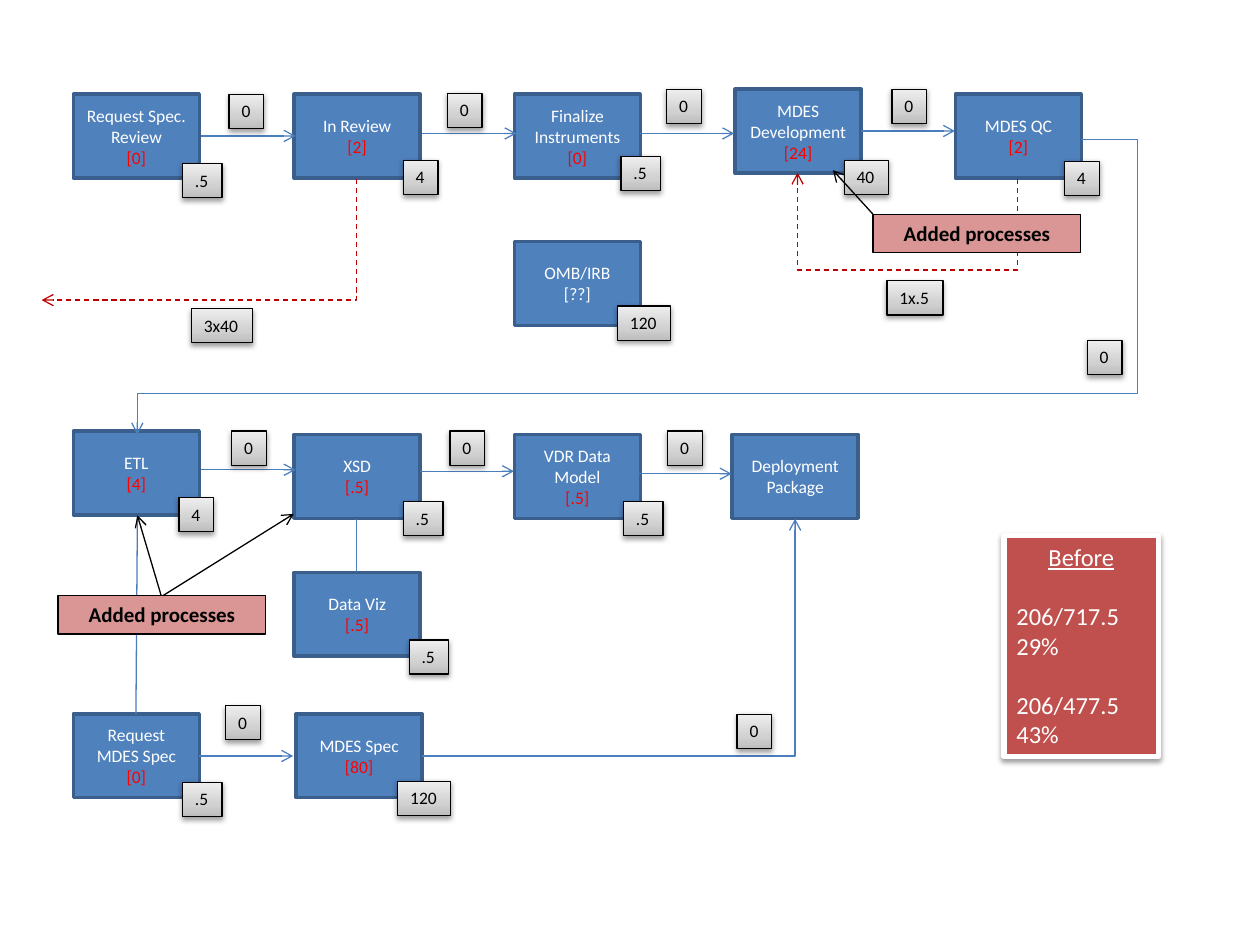
from copy import deepcopy

from lxml import etree
from pptx import Presentation
from pptx.dml.color import RGBColor
from pptx.enum.dml import MSO_LINE
from pptx.enum.shapes import MSO_CONNECTOR, MSO_SHAPE
from pptx.enum.text import MSO_ANCHOR, MSO_AUTO_SIZE, PP_ALIGN
from pptx.oxml.ns import qn
from pptx.util import Cm, Pt

RECTANGLE = MSO_SHAPE.RECTANGLE
STRAIGHT, ELBOW = MSO_CONNECTOR.STRAIGHT, MSO_CONNECTOR.ELBOW
DASH = MSO_LINE.DASH
TOP, MIDDLE = MSO_ANCHOR.TOP, MSO_ANCHOR.MIDDLE
LEFT, CENTER = PP_ALIGN.LEFT, PP_ALIGN.CENTER
FIT_TEXT = MSO_AUTO_SIZE.SHAPE_TO_FIT_TEXT

FONT = "Calibri"
WHITE = RGBColor(0xFF, 0xFF, 0xFF)
BLACK = RGBColor(0x00, 0x00, 0x00)
RED = RGBColor(0xFF, 0x00, 0x00)
DARK_RED = RGBColor(0xC0, 0x00, 0x00)
BLUE = RGBColor(0x4F, 0x81, 0xBD)
BORDER_BLUE = RGBColor(0x3A, 0x5F, 0x8C)
LINE_BLUE = RGBColor(0x4B, 0x7E, 0xBC)
PINK = RGBColor(0xD9, 0x96, 0x94)
BRICK = RGBColor(0xC0, 0x50, 0x4D)
BADGE_STOPS = [
    (0, RGBColor(0xBD, 0xBD, 0xBD)),
    (0.35, RGBColor(0xD1, 0xD1, 0xD1)),
    (1, RGBColor(0xEE, 0xEE, 0xEE)),
]

COLUMNS = [round(1.48 + 4.445 * index, 2) for index in range(5)]
ROW_1, ROW_2, ROW_3 = 1.9, 8.76, 14.39
BOX_WIDTH, BOX_HEIGHT = 2.54, 1.69
BADGE_HEIGHT = 0.69
ARROW_LENGTH = 1.9

# left, top, name lines, hours in brackets, colour of the hours
PROCESSES = [
    (COLUMNS[0], ROW_1, ["Request Spec. Review"], "[0]", RED),
    (COLUMNS[1], ROW_1, ["In Review"], "[2]", RED),
    (COLUMNS[2], ROW_1, ["Finalize Instruments"], "[0]", RED),
    (COLUMNS[3], 1.8, ["MDES Development"], "[24]", RED),
    (COLUMNS[4], ROW_1, ["MDES QC"], "[2]", RED),
    (COLUMNS[2], 4.87, ["OMB/IRB"], "[??]", WHITE),
    (COLUMNS[0], 8.69, ["ETL"], "[4]", RED),
    (COLUMNS[1], ROW_2, ["XSD"], "[.5]", RED),
    (COLUMNS[2], ROW_2, ["VDR Data Model"], "[.5]", RED),
    (14.76, ROW_2, ["Deployment Package"], None, WHITE),
    (COLUMNS[1], 11.54, ["Data Viz"], "[.5]", RED),
    (COLUMNS[0], ROW_3, ["Request", "MDES Spec"], "[0]", RED),
    (5.97, ROW_3, ["MDES Spec"], "[80]", RED),
]

# text: width, positions
BADGES = {
    "0": (0.7, [(4.62, 1.9), (9.02, 1.88), (13.44, 1.8), (17.98, 1.8),
                (21.92, 6.86), (4.67, 8.69), (9.07, 8.69), (13.46, 8.69),
                (4.55, 14.22), (14.86, 14.4)]),
    "4": (0.7, [(8.13, 3.23), (21.46, 3.25), (3.61, 10.03)]),
    ".5": (0.8, [(3.68, 3.3), (12.52, 3.15), (8.13, 10.11), (12.57, 10.11),
                 (8.25, 12.9), (3.68, 15.77)]),
    "40": (0.89, [(17.02, 3.23)]),
    "120": (1.07, [(12.45, 6.17), (8.02, 15.75)]),
    "3x40": (1.23, [(3.86, 6.22)]),
    "1x.5": (1.13, [(17.88, 5.66)]),
}

STEP_ARROWS = [
    (4.06, 2.74), (8.51, 2.69), (12.9, 2.69), (17.35, 2.64),
    (4.06, 9.47), (8.46, 9.5), (12.85, 9.55), (4.01, 15.24),
]
PLAIN_LINES = [((2.77, 10.39), (2.74, 14.4)), ((7.19, 10.46), (7.19, 11.53))]
CALLOUTS = [(17.6, 4.32), (1.17, 12.01)]
CALLOUT_ARROWS = [
    ((17.6, 4.32), (16.79, 3.43)),
    ((3.25, 12.01), (2.77, 10.39)),
    ((3.28, 12.01), (5.92, 10.36)),
]


def add_rectangle(slide, left, top, width, height, line_color, line_width, fill=None):
    shape = slide.shapes.add_shape(
        RECTANGLE, Cm(left), Cm(top), Cm(width), Cm(height))
    shape.shadow.inherit = False
    if fill is not None:
        shape.fill.solid()
        shape.fill.fore_color.rgb = fill
    shape.line.color.rgb = line_color
    shape.line.width = Pt(line_width)
    return shape


def write_lines(shape, lines, size, color, alignment, anchor=TOP):
    frame = shape.text_frame
    frame.word_wrap = True
    frame.vertical_anchor = anchor
    frame.text = "\n".join(lines)
    for paragraph in frame.paragraphs:
        paragraph.alignment = alignment
        paragraph.font.name = FONT
        paragraph.font.size = Pt(size)
        paragraph.font.color.rgb = color
    return frame


def add_soft_shadow(shape):
    effects = shape._element.spPr.find(qn("a:effectLst"))
    shadow = etree.SubElement(effects, qn("a:outerShdw"), blurRad=str(Pt(3.1)),
                              dist=str(Pt(1.6)), dir="5400000", rotWithShape="0")
    color = etree.SubElement(shadow, qn("a:srgbClr"), val=str(BLACK))
    etree.SubElement(color, qn("a:alpha"), val="38000")


def add_process(slide, left, top, names, hours, hours_color):
    shape = add_rectangle(slide, left, top, BOX_WIDTH, BOX_HEIGHT, BORDER_BLUE, 2, BLUE)
    lines = names + [hours] if hours else names
    frame = write_lines(shape, lines, 10, WHITE, CENTER, MIDDLE)
    if hours:
        frame.paragraphs[-1].font.color.rgb = hours_color


def add_badge(slide, text, left, top, width):
    shape = add_rectangle(slide, left, top, width, BADGE_HEIGHT, BLACK, 0.75)
    shape.fill.gradient()
    shape.fill.gradient_angle = 90
    stop_list = shape._element.spPr.find(".//" + qn("a:gsLst"))
    stop_list.append(deepcopy(stop_list[0]))
    for stop, (position, color) in zip(shape.fill.gradient_stops, BADGE_STOPS):
        stop.position = position
        stop.color.rgb = color
    add_soft_shadow(shape)
    frame = write_lines(shape, [text], 10, BLACK, LEFT)
    frame.word_wrap = False
    frame.auto_size = FIT_TEXT


def add_callout(slide, left, top):
    shape = add_rectangle(slide, left, top, 4.19, 0.77, BLACK, 0.75, PINK)
    frame = write_lines(shape, ["Added processes"], 12, BLACK, CENTER)
    frame.paragraphs[0].font.bold = True


def add_summary(slide):
    shape = add_rectangle(slide, 20.24, 10.8, 3.12, 4.45, WHITE, 3, BRICK)
    add_soft_shadow(shape)
    lines = ["Before", "206/717.5", "29%", "206/477.5", "43%"]
    paragraphs = write_lines(shape, lines, 14, WHITE, LEFT).paragraphs
    paragraphs[0].alignment = CENTER
    paragraphs[0].font.underline = True
    for paragraph in (paragraphs[1], paragraphs[3]):
        paragraph.space_before = Pt(17)


def add_line(slide, begin, end, color=LINE_BLUE, arrow=True, kind=STRAIGHT):
    connector = slide.shapes.add_connector(kind, *map(Cm, begin + end))
    connector.line.color.rgb = color
    connector.line.width = Pt(0.75)
    properties = connector._element.spPr
    if arrow:
        etree.SubElement(properties.find(qn("a:ln")), qn("a:tailEnd"), type="arrow")
    etree.SubElement(properties, qn("a:effectLst"))
    return connector


def add_elbow(slide, begin, end, preset, adjustments=(), color=LINE_BLUE, upright=False):
    """Draw a bent arrow; an upright one leaves its start vertically."""
    if upright:
        middle_x, middle_y = (begin[0] + end[0]) / 2, (begin[1] + end[1]) / 2
        begin, end = [(middle_x + y - middle_y, middle_y - x + middle_x)
                      for x, y in (begin, end)]
    connector = add_line(slide, begin, end, color, kind=ELBOW)
    properties = connector._element.spPr
    if upright:
        properties.find(qn("a:xfrm")).set("rot", "5400000")
    geometry = properties.find(qn("a:prstGeom"))
    geometry.set("prst", preset)
    for number, value in enumerate(adjustments, 1):
        etree.SubElement(geometry.find(qn("a:avLst")), qn("a:gd"),
                         name=f"adj{number}", fmla=f"val {round(value * 100000)}")
    return connector


def add_flow_lines(slide):
    for left, top in STEP_ARROWS:
        add_line(slide, (left, top), (left + ARROW_LENGTH, top))
    for begin, end in PLAIN_LINES:
        add_line(slide, begin, end, arrow=False)
    add_elbow(slide, (21.79, 2.82), (2.77, 8.76), "bentConnector4", (-0.06, 0.86))
    add_elbow(slide, (8.51, 15.24), (16.03, 10.46), "bentConnector2")
    rework_lines = [
        ((20.52, 3.61), (16.08, 3.48), "bentConnector3", (-14.1,)),
        ((7.19, 3.61), (0.84, 6.05), "bentConnector2", ()),
    ]
    for rework in rework_lines:
        connector = add_elbow(slide, *rework, color=DARK_RED, upright=True)
        connector.line.dash_style = DASH


def main():
    presentation = Presentation()
    presentation.slide_width, presentation.slide_height = Cm(25.4), Cm(19.05)
    slide = presentation.slides.add_slide(presentation.slide_layouts[6])
    for process in PROCESSES:
        add_process(slide, *process)
    add_flow_lines(slide)
    for text, (width, positions) in BADGES.items():
        for left, top in positions:
            add_badge(slide, text, left, top, width)
    add_summary(slide)
    for left, top in CALLOUTS:
        add_callout(slide, left, top)
    for begin, end in CALLOUT_ARROWS:
        add_line(slide, begin, end, BLACK)
    presentation.save("out.pptx")


if __name__ == "__main__":
    main()
